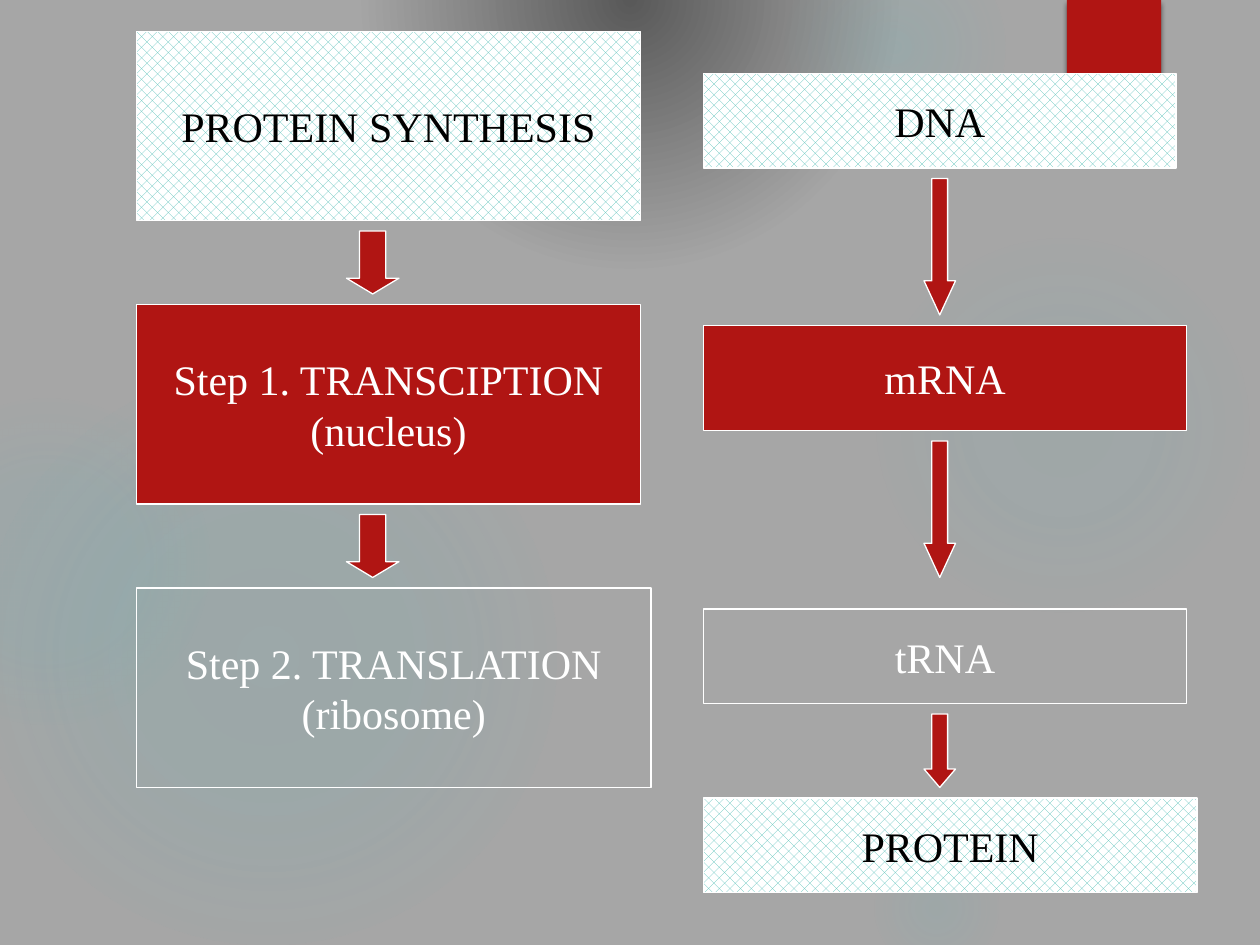
import pptx
import pptx.util
import pptx.dml.color
import pptx.enum.dml
import pptx.enum.shapes
import pptx.enum.text
import pptx.oxml
import pptx.oxml.ns

RED = pptx.dml.color.RGBColor(0xB0, 0x15, 0x13)
TEAL = pptx.dml.color.RGBColor(0x58, 0xC1, 0xBA)
GLOW = pptx.dml.color.RGBColor(0x50, 0xB9, 0xC1)
WHITE = pptx.dml.color.RGBColor(0xFF, 0xFF, 0xFF)
BLACK = pptx.dml.color.RGBColor(0x00, 0x00, 0x00)
DARK_GREY = pptx.dml.color.RGBColor(0x59, 0x59, 0x59)
GREY = pptx.dml.color.RGBColor(0xA6, 0xA6, 0xA6)
SHAPES = pptx.enum.shapes.MSO_SHAPE
HATCH = pptx.enum.dml.MSO_PATTERN.from_xml("pct40")
NAMESPACE = pptx.oxml.ns.nsdecls("a")

deck = pptx.Presentation()
deck.slide_width = pptx.util.Inches(10)
deck.slide_height = pptx.util.Inches(7.5)
page = deck.slides.add_slide(deck.slide_layouts[6])
COLUMN = deck.slide_width / 120
ROW = deck.slide_height / 90


def add_plain(kind, left, top, width, height):
    shape = page.shapes.add_shape(
        kind, round(left * COLUMN), round(top * ROW), round(width * COLUMN), round(height * ROW)
    )
    shape.shadow.inherit = False
    shape.line.fill.background()
    return shape


def fill_radial(owner, fill, stops, top, bottom):
    fill.solid()
    solid = owner.find(".//" + pptx.oxml.ns.qn("a:solidFill"))
    stop_xml = "".join(
        f'<a:gs pos="{position * 1000}"><a:srgbClr val="{color}">'
        f'<a:alpha val="{alpha * 1000}"/></a:srgbClr></a:gs>'
        for position, color, alpha in stops
    )
    gradient = pptx.oxml.parse_xml(
        f'<a:gradFill {NAMESPACE} rotWithShape="1"><a:gsLst>{stop_xml}</a:gsLst>'
        f'<a:path path="circle"><a:fillToRect l="50000" t="{top * 1000}" '
        f'r="50000" b="{bottom * 1000}"/></a:path></a:gradFill>'
    )
    solid.getparent().replace(solid, gradient)


fill_radial(page.element, page.background.fill,
            [(0, DARK_GREY, 100), (35, GREY, 100)], -80, 180)

glows = [
    (82.7, 22, 37, 7, 6, 69),
    (74.7, -6, 21, 14, 7, 73),
    (82.7, 80, 13, 9, 5, 66),
    (-2, 35, 55, 11, 10, 75),
    (-11, 38, 31, 8, 8, 72),
]
for left, top, size, center_alpha, middle_alpha, edge in glows:
    glow = add_plain(SHAPES.OVAL, left, top, size, size)
    stops = [(0, GLOW, center_alpha), (36, GLOW, middle_alpha), (edge, GLOW, 0)]
    fill_radial(glow.element, glow.fill, stops, 50, 50)

tab = add_plain(SHAPES.RECTANGLE, 101.6, 0, 9, 14.4)
tab.fill.solid()
tab.fill.fore_color.rgb = RED
tab.element.spPr.find(pptx.oxml.ns.qn("a:effectLst")).append(pptx.oxml.parse_xml(
    f'<a:outerShdw {NAMESPACE} blurRad="38100" dist="25400" dir="5400000" rotWithShape="0">'
    '<a:srgbClr val="000000"><a:alpha val="45000"/></a:srgbClr></a:outerShdw>'
))

boxes = [
    (13, 3, 48, 18, "pattern", ["PROTEIN SYNTHESIS"]),
    (13, 29, 48, 19, "red", ["Step 1. TRANSCIPTION", "(nucleus)"]),
    (13, 56, 49, 19, "clear", ["Step 2. TRANSLATION", "(ribosome)"]),
    (67, 7, 45, 9, "pattern", ["DNA"]),
    (67, 31, 46, 10, "red", ["mRNA"]),
    (67, 58, 46, 9, "clear", ["tRNA"]),
    (67, 76, 47, 9, "pattern", ["PROTEIN"]),
]
for left, top, width, height, style, lines in boxes:
    box = add_plain(SHAPES.RECTANGLE, left, top, width, height)
    box.line.color.rgb = WHITE
    box.line.width = pptx.util.Pt(0.75)
    if style == "pattern":
        box.fill.patterned()
        box.fill.pattern = HATCH
        box.fill.fore_color.rgb = TEAL
        box.fill.back_color.rgb = WHITE
    elif style == "red":
        box.fill.solid()
        box.fill.fore_color.rgb = RED
    else:
        box.fill.background()
    frame = box.text_frame
    frame.word_wrap = False
    frame.vertical_anchor = pptx.enum.text.MSO_ANCHOR.MIDDLE
    for index, line in enumerate(lines):
        para = frame.add_paragraph() if index else frame.paragraphs[0]
        para.alignment = pptx.enum.text.PP_ALIGN.CENTER
        span = para.add_run()
        span.text = line
        span.font.name = "Times New Roman"
        span.font.size = pptx.util.Pt(24)
        span.font.color.rgb = BLACK if style == "pattern" else WHITE

arrows = [
    (33, 22, 5, 6),
    (33, 49, 5, 6),
    (88, 17, 3, 13),
    (88, 42, 3, 13),
    (88, 68, 3, 7),
]
for left, top, width, height in arrows:
    arrow = add_plain(SHAPES.DOWN_ARROW, left, top, width, height)
    arrow.adjustments[0] = 0.5
    arrow.adjustments[1] = height / width / 4
    arrow.fill.solid()
    arrow.fill.fore_color.rgb = RED
    arrow.line.color.rgb = WHITE
    arrow.line.width = pptx.util.Pt(0.75)

deck.save("out.pptx")
